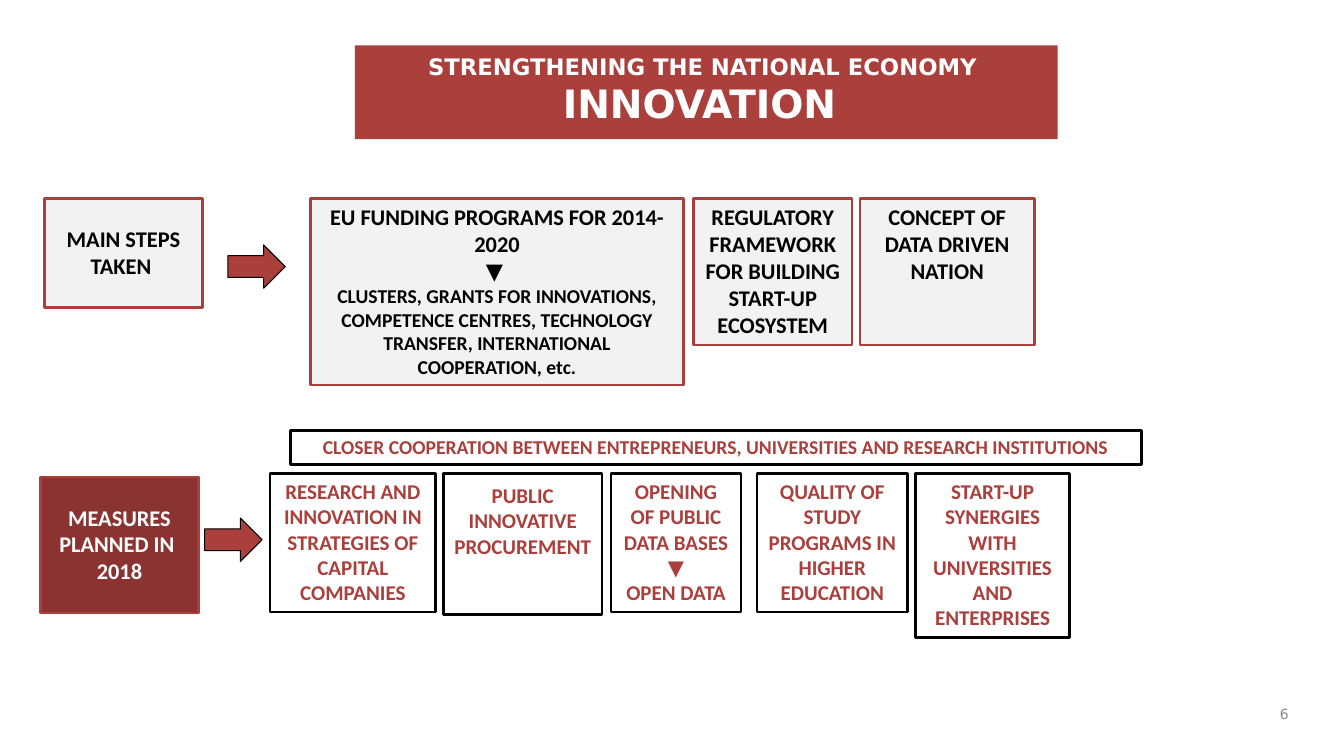
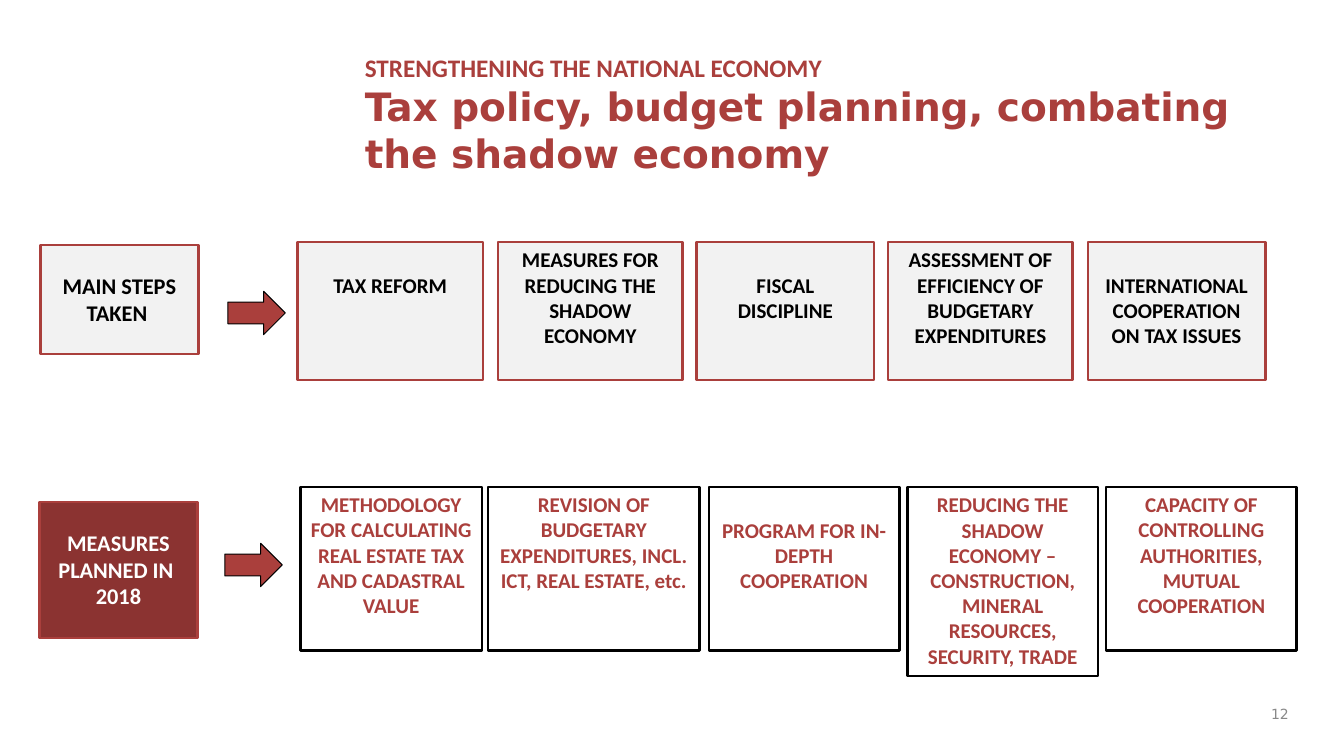
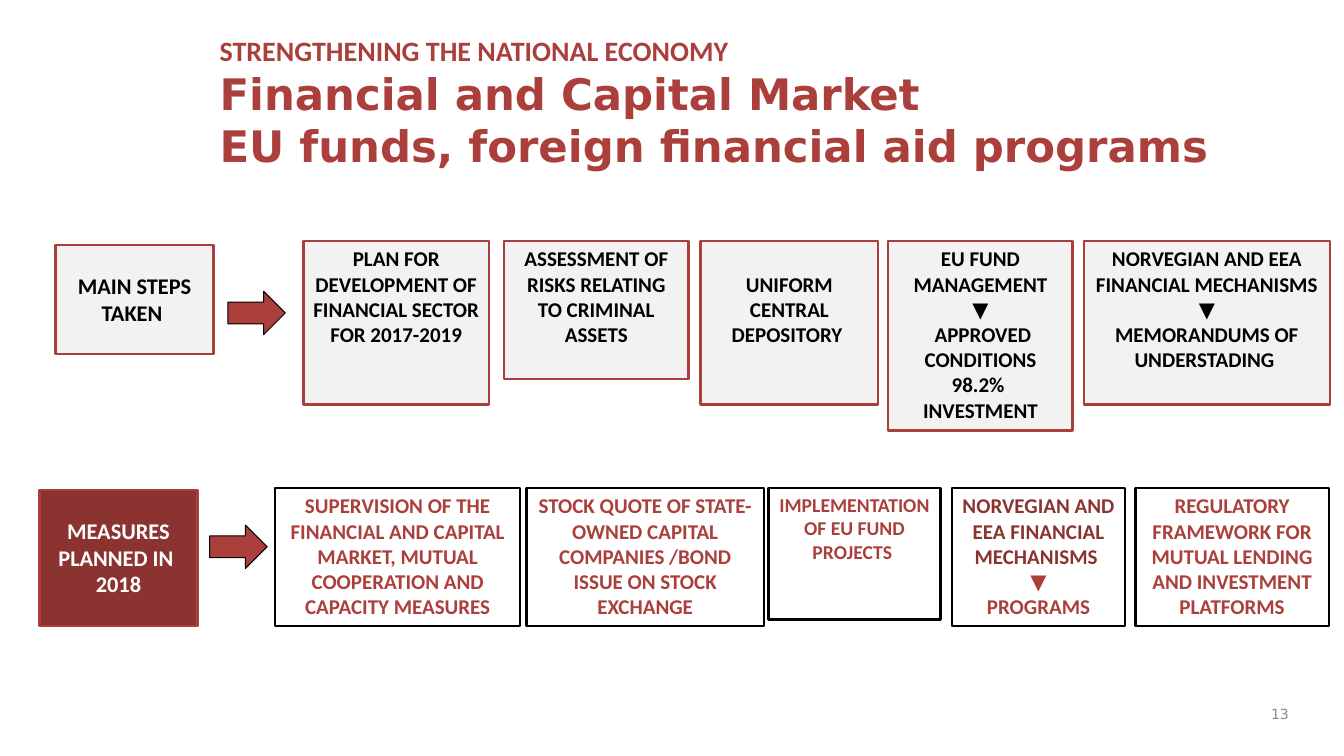
import pptx
import pptx.util
import pptx.dml.color
import pptx.enum.shapes
import pptx.enum.text

In, Pt = pptx.util.Inches, pptx.util.Pt
SHAPE = pptx.enum.shapes.MSO_SHAPE
ALIGN = pptx.enum.text.PP_ALIGN
ANCHOR = pptx.enum.text.MSO_ANCHOR

C = {"red": "AA3F3C", "dark": "8B3331", "pale": "F2F2F2", "white": "FFFFFF",
     "black": "000000", "grey": "898989"}
BODY, HEAD = "Calibri", "DejaVu Sans"
LINE_HEIGHT = 1.22 / 72
PAD = 0.05

STYLES = {
    "steps": {"fill": "pale", "line": "red", "color": "black"},
    "plans": {"fill": "white", "line": "black", "color": "red"},
    "plan_label": {"fill": "dark", "line": "red", "color": "white"},
}
LABELS = {
    "steps": ("steps", 1.08, ["MAIN STEPS TAKEN "]),
    "plans": ("plan_label", 1.35, ["MEASURES PLANNED IN ", "2018"]),
}
KICKER = "STRENGTHENING THE NATIONAL ECONOMY"

# Box: left, width, height in lines, lines skipped above the text, paragraphs
SLIDES = [
    {"number": "6",
     "title": {"at": (3.52, 0.45, 6.97, 0.93), "fill": "red", "color": "white", "align": ALIGN.CENTER,
               "lines": [(KICKER + " ", 16.2, HEAD), ("INNOVATION ", 27.9, HEAD)]},
     "rows": [
         {"kind": "steps", "top": 1.97, "size": 16, "label": (0.44, 1.97), "arrow": (2.26, 2.43),
          "boxes": [
              (3.08, 3.7, 6.45, 0, ["EU FUNDING PROGRAMS FOR 2014-2020", "▼ ",
                                    ("CLUSTERS, GRANTS FOR INNOVATIONS, COMPETENCE CENTRES, TECHNOLOGY "
                                     "TRANSFER, INTERNATIONAL COOPERATION, etc.", {"size": 14})]),
              (6.88, 1.57, 5, 0, ["REGULATORY FRAMEWORK FOR BUILDING START-UP ECOSYSTEM"]),
              (8.53, 1.73, 5, 0, ["CONCEPT OF DATA DRIVEN NATION"]),
          ]},
         {"kind": "plans", "top": 4.27, "size": 14, "boxes": [
             (2.88, 8.44, 1, 0, ["CLOSER COOPERATION BETWEEN ENTREPRENEURS, UNIVERSITIES AND "
                                 "RESEARCH INSTITUTIONS"]),
         ]},
         {"kind": "plans", "top": 4.7, "size": 15, "label": (0.4, 4.73), "arrow": (2.03, 5.14),
          "boxes": [
              (2.68, 1.64, 5, 0, ["RESEARCH AND INNOVATION IN STRATEGIES OF CAPITAL COMPANIES"]),
              (4.4, 1.57, 5.1, 0.15, ["PUBLIC INNOVATIVE PROCUREMENT"]),
              (6.06, 1.29, 5, 0, ["OPENING OF PUBLIC DATA BASES ▼", "OPEN DATA"]),
              (7.51, 1.49, 5, 0, ["QUALITY OF STUDY PROGRAMS IN HIGHER EDUCATION"]),
              (9.08, 1.53, 6, 0, ["START-UP SYNERGIES WITH UNIVERSITIES AND ENTERPRISES"]),
          ]},
     ]},
    {"number": "12",
     "title": {"at": (3.52, 0.45, 9.36, 1.36), "color": "red", "align": ALIGN.LEFT,
               "lines": [(KICKER, 18, BODY),
                         ("Tax policy, budget planning, combating the shadow economy", 27.9, HEAD)]},
     "rows": [
         {"kind": "steps", "top": 2.4, "size": 15, "label": (0.4, 2.43), "arrow": (2.26, 2.89),
          "boxes": [
              (2.95, 1.84, 5, 1, ["TAX REFORM"]),
              (4.94, 1.83, 5, 0, ["MEASURES FOR REDUCING THE SHADOW ECONOMY"]),
              (6.91, 1.76, 5, 1, ["FISCAL DISCIPLINE"]),
              (8.81, 1.83, 5, 0, ["ASSESSMENT OF EFFICIENCY OF BUDGETARY EXPENDITURES"]),
              (10.79, 1.76, 5, 1, ["INTERNATIONAL COOPERATION ON TAX ISSUES"]),
          ]},
         {"kind": "plans", "top": 4.83, "size": 15, "label": (0.39, 4.98), "arrow": (2.23, 5.39),
          "boxes": [
              (2.98, 1.8, 6, 0, ["METHODOLOGY FOR CALCULATING REAL ESTATE TAX", "AND CADASTRAL VALUE"]),
              (4.84, 2.1, 6, 0, ["REVISION OF BUDGETARY EXPENDITURES, INCL. ICT, REAL ESTATE, etc."]),
              (7.03, 1.89, 6, 1, ["PROGRAM FOR IN-DEPTH COOPERATION"]),
              (9, 1.89, 7, 0, ["REDUCING THE SHADOW ECONOMY – CONSTRUCTION, MINERAL RESOURCES, "
                               "SECURITY, TRADE"]),
              (10.97, 1.89, 6, 0, ["CAPACITY OF CONTROLLING AUTHORITIES, MUTUAL COOPERATION"]),
          ]},
     ]},
    {"number": "13",
     "title": {"at": (2.08, 0.26, 11.14, 1.62), "color": "red", "align": ALIGN.LEFT,
               "lines": [(KICKER, 20, BODY), ("Financial and Capital Market", 31, HEAD),
                         ("EU funds, foreign financial aid programs", 31, HEAD)]},
     "rows": [
         {"kind": "steps", "top": 2.39, "size": 15, "label": (0.55, 2.43), "arrow": (2.26, 2.89),
          "boxes": [
              (3.01, 1.84, 6, 0, ["PLAN FOR DEVELOPMENT OF FINANCIAL SECTOR FOR 2017-2019"]),
              (5, 1.83, 5, 0, ["ASSESSMENT OF RISKS RELATING TO CRIMINAL ASSETS"]),
              (6.95, 1.76, 6, 1, ["UNIFORM CENTRAL DEPOSITORY "]),
              (8.81, 1.83, 7, 0, ["EU FUND MANAGEMENT", "▼", " APPROVED CONDITIONS 98.2% ",
                                  "INVESTMENT"]),
              (10.75, 2.44, 6, 0, ["NORVEGIAN AND EEA FINANCIAL MECHANISMS ▼",
                                   "MEMORANDUMS OF UNDERSTADING "]),
          ]},
         {"kind": "plans", "top": 4.84, "size": 15, "label": (0.39, 4.86), "arrow": (2.08, 5.21),
          "boxes": [
              (2.73, 2.43, 5, 0, ["SUPERVISION OF THE FINANCIAL AND CAPITAL MARKET, MUTUAL "
                                  "COOPERATION AND CAPACITY MEASURES"]),
              (5.22, 2.36, 5, 0, ["STOCK QUOTE OF STATE-OWNED CAPITAL COMPANIES /BOND ISSUE ON "
                                  "STOCK EXCHANGE"]),
              (7.62, 1.71, 4.75, 0, [("IMPLEMENTATION OF EU FUND PROJECTS ", {"size": 14})]),
              (9.44, 1.72, 5, 0, [("NORVEGIAN AND EEA FINANCIAL MECHANISMS ", {"color": "dark"}),
                                  "▼", "PROGRAMS"]),
              (11.26, 1.92, 5, 0, ["REGULATORY FRAMEWORK FOR MUTUAL LENDING AND INVESTMENT PLATFORMS"]),
          ]},
     ]},
]


def rgb(name):
    return pptx.dml.color.RGBColor.from_string(C[name])


def add_block(slide, at, fill=None, line=None, weight=1.75, kind=SHAPE.RECTANGLE):
    place = [In(v) for v in at]
    if not fill:
        return slide.shapes.add_textbox(*place)
    sp = slide.shapes.add_shape(kind, *place)
    sp.shadow.inherit = False
    sp.fill.solid()
    sp.fill.fore_color.rgb = rgb(fill)
    if line:
        sp.line.color.rgb = rgb(line)
        sp.line.width = Pt(weight)
    else:
        sp.line.fill.background()
    return sp


def write(sp, lines, align, top=PAD, anchor=ANCHOR.TOP):
    tf = sp.text_frame
    tf.word_wrap = True
    tf.vertical_anchor = anchor
    tf.margin_left = tf.margin_right = In(0.1)
    tf.margin_top, tf.margin_bottom = In(top), In(PAD)
    for i, (text, size, font, color, bold) in enumerate(lines):
        p = tf.add_paragraph() if i else tf.paragraphs[0]
        p.text = text
        p.alignment = align
        p.font.size, p.font.name, p.font.bold = Pt(size), font, bold
        p.font.color.rgb = rgb(color)


def add_box(slide, at, style, size, skip, paragraphs):
    look = STYLES[style]
    lines = []
    for item in paragraphs:
        text, own = (item, {}) if isinstance(item, str) else item
        lines.append((text, own.get("size", size), BODY, own.get("color", look["color"]), True))
    sp = add_block(slide, at, look["fill"], look["line"])
    write(sp, lines, ALIGN.CENTER, PAD + skip * size * LINE_HEIGHT)


def add_row(slide, row):
    kind, size = row["kind"], row["size"]
    if "label" in row:
        style, height, text = LABELS[kind]
        add_box(slide, (*row["label"], 1.57, height), style, 16, 0.8, text)
        add_block(slide, (*row["arrow"], 0.57, 0.43), "red", "black", 0.75, SHAPE.RIGHT_ARROW)
    for left, width, count, skip, text in row["boxes"]:
        height = count * size * LINE_HEIGHT + 2 * PAD
        add_box(slide, (left, row["top"], width, height), kind, size, skip, text)


def main():
    prs = pptx.Presentation()
    prs.slide_width, prs.slide_height = In(13.33), In(7.5)
    for data in SLIDES:
        slide = prs.slides.add_slide(prs.slide_layouts[6])
        title = data["title"]
        sp = add_block(slide, title["at"], title.get("fill"))
        write(sp, [(*line, title["color"], True) for line in title["lines"]], title["align"], 0.07)
        for row in data["rows"]:
            add_row(slide, row)
        sp = add_block(slide, (12.44, 6.92, 0.44, 0.33))
        write(sp, [(data["number"], 10, HEAD, "grey", False)], ALIGN.RIGHT, anchor=ANCHOR.MIDDLE)
    prs.save("out.pptx")


if __name__ == "__main__":
    main()
